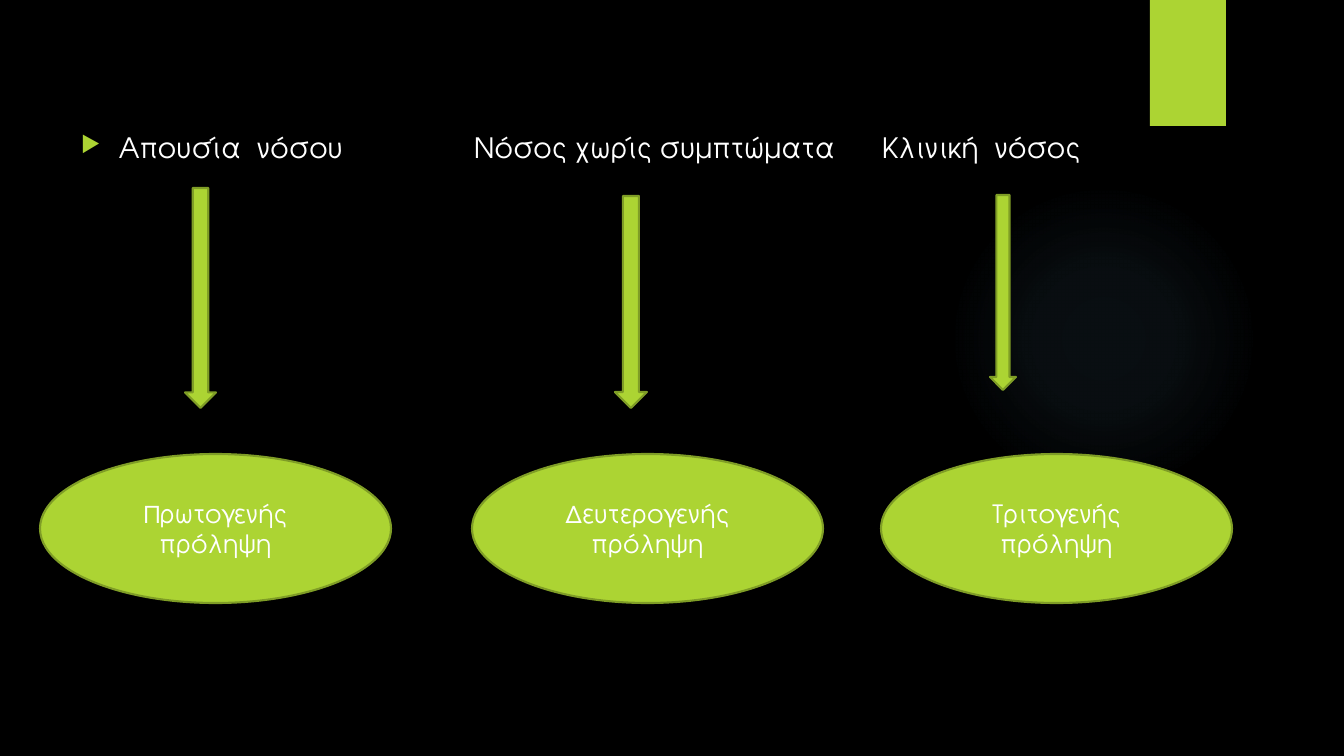
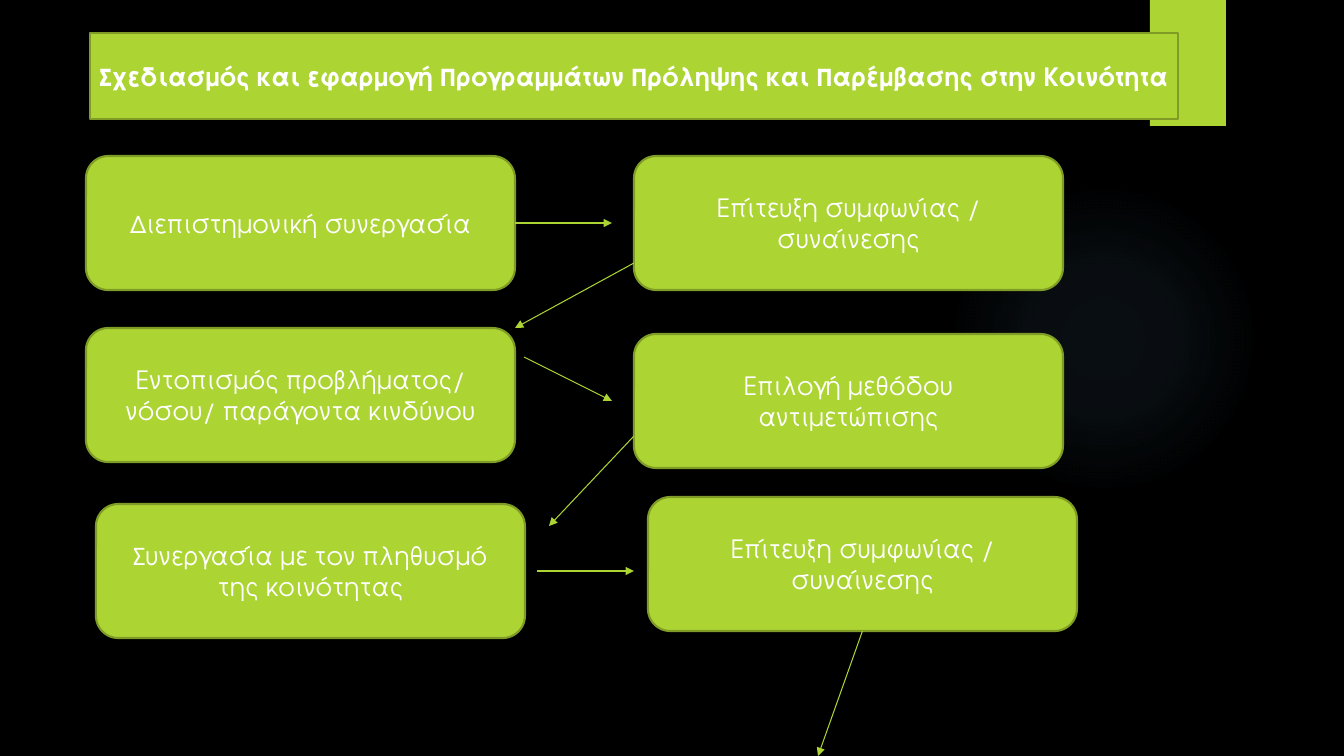
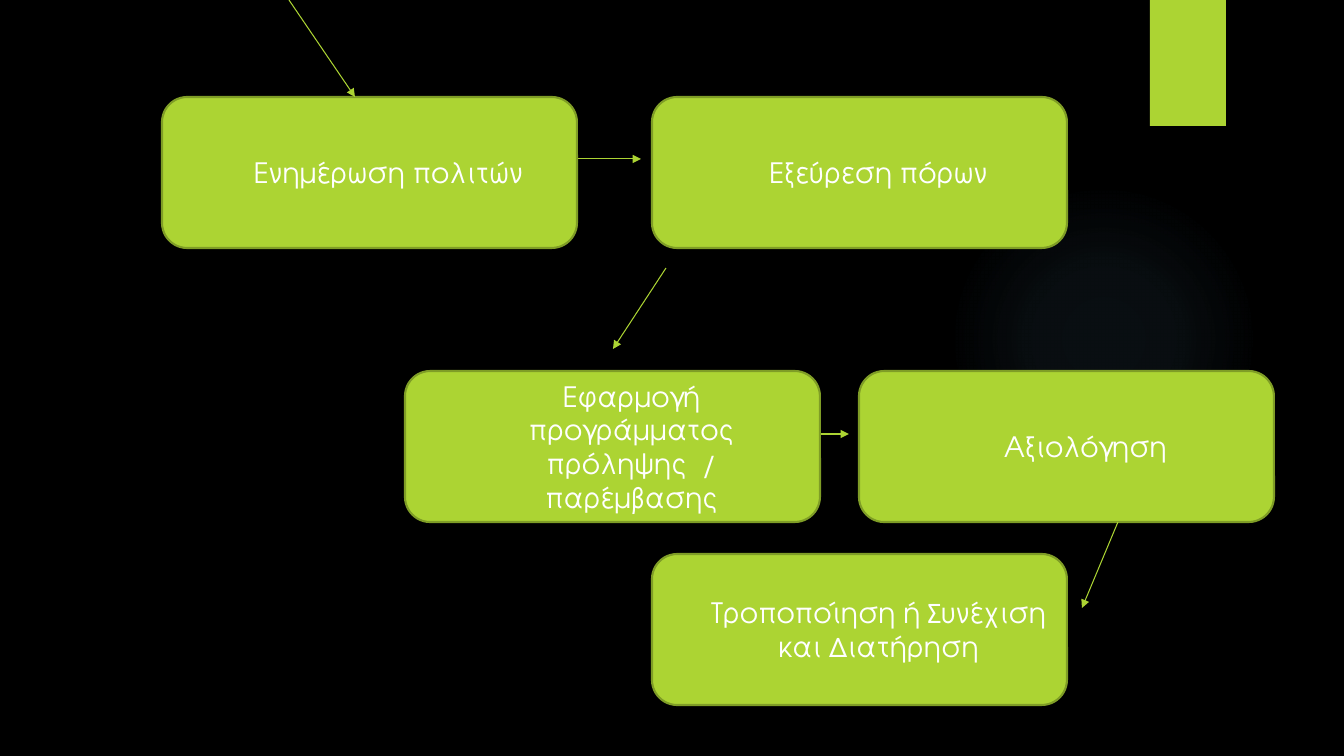
from lxml import etree
from pptx import Presentation
from pptx.dml.color import RGBColor
from pptx.enum.shapes import MSO_CONNECTOR, MSO_SHAPE
from pptx.enum.text import MSO_ANCHOR, PP_ALIGN
from pptx.oxml import parse_xml
from pptx.oxml.ns import nsdecls, qn
from pptx.util import Emu, Pt

# Shared look
FONT = "TeX Gyre Adventor"
BLACK, WHITE = "000000", "FFFFFF"
LIME, OLIVE, SKY = "ACD433", "7F9D26", "7AC4F0"
EMU_PER_PX = 914400 / 100.8
PAGE_SIZE = (1344, 756)
GLOW = (949, 184, 310, 310)
GLOW_STOPS = [(0, 7), (36, 6), (69, 0)]  # position %, opacity %
CORNER_TAB = (1150, 0, 76, 126)
INDENT = 38
BOTTOM, RIGHT = 2, 3

# Slide 1: stages of disease and levels of prevention
STAGE_TOP, STAGE_SIZE = 126, (400, 50)
STAGES = [(71, "Απουσία  νόσου"), (464, "Νόσος χωρίς συμπτώματα"), (872, "Κλινική  νόσος")]
LEVEL_TOP, LEVEL_SIZE = 454, (351, 149)
LEVELS = [(40, "Πρωτογενής πρόληψη"), (472, "Δευτερογενής πρόληψη"), (881, "Τριτογενής πρόληψη")]
DOWN_ARROWS = [(185, 188, 31, 220), (615, 196, 32, 212), (990, 195, 26, 195)]

# Slide 2: first part of the programme; arrows are (from, to, joined step, side)
TITLE = "Σχεδιασμός και εφαρμογή Προγραμμάτων Πρόληψης και Παρέμβασης στην Κοινότητα"
TITLE_PLACE = (90, 33, 1088, 86)
PLAN_SIZE = (429, 134)
PLAN_STEPS = [
    (86, 156, "Διεπιστημονική συνεργασία"),
    (634, 156, "Επίτευξη συμφωνίας / συναίνεσης"),
    (86, 328, "Εντοπισμός προβλήματος/ νόσου/ παράγοντα κινδύνου"),
    (634, 334, "Επιλογή μεθόδου αντιμετώπισης"),
    (96, 504, "Συνεργασία με τον πληθυσμό της κοινότητας"),
    (648, 497, "Επίτευξη συμφωνίας / συναίνεσης"),
]
PLAN_ARROWS = [
    ((515, 223), (612, 223), 0, RIGHT),
    ((634, 263), (515, 328), None, None),
    ((524, 357), (612, 401), None, None),
    ((634, 436), (549, 526), None, None),
    ((537, 571), (634, 571), None, None),
    ((862, 631), (818, 756), 5, BOTTOM),
]

# Slide 3: second part of the programme
ACTION_SIZE = (415, 151)
ACTION_STEPS = [
    (162, 97, "Ενημέρωση πολιτών"),
    (652, 97, "Εξεύρεση πόρων"),
    (405, 371, "Εφαρμογή προγράμματος πρόληψης  / παρέμβασης"),
    (859, 371, "Αξιολόγηση"),
    (652, 554, "Τροποποίηση ή Συνέχιση και Διατήρηση"),
]
ACTION_ARROWS = [
    ((289, 0), (355, 97), None, None),
    ((578, 159), (641, 159), None, None),
    ((666, 268), (613, 349), None, None),
    ((821, 434), (849, 434), None, None),
    ((1118, 522), (1082, 608), None, None),
]


def px(*lengths):
    return [Emu(round(length * EMU_PER_PX)) for length in lengths]


def color(value):
    return RGBColor.from_string(value)


def write(box, text, size, bold=False, align=PP_ALIGN.LEFT, anchor=MSO_ANCHOR.TOP,
          indent=0, bullet=False):
    frame = box.text_frame
    frame.word_wrap = True
    frame.vertical_anchor = anchor
    para = frame.paragraphs[0]
    para.alignment = align
    if indent:
        margin = px(indent)[0]
        properties = para._p.get_or_add_pPr()
        properties.set("marL", str(margin))
        if bullet:
            properties.set("indent", str(-margin))
            color_mark = etree.SubElement(properties, qn("a:buClr"))
            etree.SubElement(color_mark, qn("a:srgbClr"), val=LIME)
            etree.SubElement(properties, qn("a:buSzPct"), val="80000")
            etree.SubElement(properties, qn("a:buChar"), char="▶")
    span = para.add_run()
    span.text = text
    span.font.name = FONT
    span.font.size = Pt(size)
    span.font.bold = bold
    span.font.color.rgb = color(WHITE)


def add_panel(page, kind, place, outlined=True):
    panel = page.shapes.add_shape(kind, *px(*place))
    panel.shadow.inherit = False
    panel.fill.solid()
    panel.fill.fore_color.rgb = color(LIME)
    if outlined:
        panel.line.color.rgb = color(OLIVE)
        panel.line.width = Pt(1.5)
    else:
        panel.line.fill.background()
    return panel


def add_label(page, kind, place, text, size, **style):
    panel = add_panel(page, kind, place)
    write(panel, text, size, align=PP_ALIGN.CENTER, anchor=MSO_ANCHOR.MIDDLE, **style)
    return panel


def add_glow(page):
    glow = page.shapes.add_shape(MSO_SHAPE.OVAL, *px(*GLOW))
    glow.shadow.inherit = False
    glow.line.fill.background()
    stops = "".join(
        f'<a:gs pos="{position * 1000}"><a:srgbClr val="{SKY}">'
        f'<a:alpha val="{opacity * 1000}"/></a:srgbClr></a:gs>'
        for position, opacity in GLOW_STOPS)
    gradient = parse_xml(
        f'<a:gradFill {nsdecls("a")} rotWithShape="1"><a:gsLst>{stops}</a:gsLst>'
        '<a:path path="circle"><a:fillToRect l="50000" t="50000" r="50000" b="50000"/>'
        '</a:path></a:gradFill>')
    glow._element.spPr.find(qn("a:prstGeom")).addnext(gradient)


def add_page(deck):
    page = deck.slides.add_slide(deck.slide_layouts[6])
    page.background.fill.solid()
    page.background.fill.fore_color.rgb = color(BLACK)
    add_glow(page)
    add_panel(page, MSO_SHAPE.RECTANGLE, CORNER_TAB, outlined=False)
    return page


def add_flow(page, steps, step_size, arrows, text_size, indent=0):
    boxes = [add_label(page, MSO_SHAPE.ROUNDED_RECTANGLE, (left, top, *step_size),
                       text, text_size, indent=indent)
             for left, top, text in steps]
    for start, end, joined, side in arrows:
        arrow = page.shapes.add_connector(MSO_CONNECTOR.STRAIGHT, *px(*start, *end))
        if joined is not None:
            arrow.begin_connect(boxes[joined], side)
        arrow.line.color.rgb = color(LIME)
        arrow.line.width = Pt(0.75)
        properties = arrow._element.spPr
        etree.SubElement(properties.find(qn("a:ln")), qn("a:tailEnd"), type="triangle")
        etree.SubElement(properties, qn("a:effectLst"))


def build_levels(deck):
    page = add_page(deck)
    for number, (left, text) in enumerate(STAGES):
        box = page.shapes.add_textbox(*px(left, STAGE_TOP, *STAGE_SIZE))
        first = number == 0
        write(box, text, 20, indent=INDENT if first else 0, bullet=first)
    for left, text in LEVELS:
        add_label(page, MSO_SHAPE.OVAL, (left, LEVEL_TOP, *LEVEL_SIZE), text, 18)
    for place in DOWN_ARROWS:
        add_panel(page, MSO_SHAPE.DOWN_ARROW, place)


def build_plan(deck):
    page = add_page(deck)
    add_label(page, MSO_SHAPE.RECTANGLE, TITLE_PLACE, TITLE, 18, bold=True)
    add_flow(page, PLAN_STEPS, PLAN_SIZE, PLAN_ARROWS, 18)


def build_actions(deck):
    page = add_page(deck)
    add_flow(page, ACTION_STEPS, ACTION_SIZE, ACTION_ARROWS, 20, indent=INDENT)


def main():
    deck = Presentation()
    deck.slide_width, deck.slide_height = px(*PAGE_SIZE)
    build_levels(deck)
    build_plan(deck)
    build_actions(deck)
    deck.save("out.pptx")


if __name__ == "__main__":
    main()
